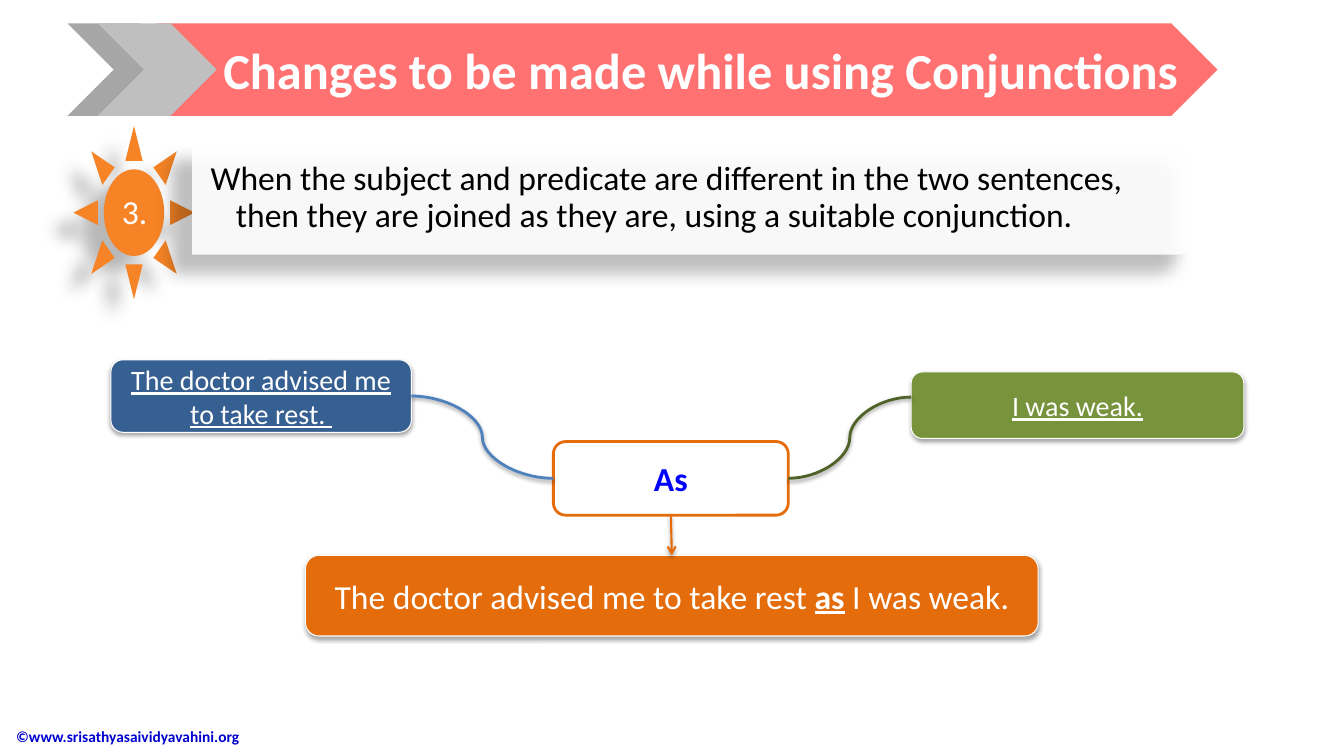
from lxml.etree import SubElement
from pptx import Presentation
from pptx.dml.color import RGBColor
from pptx.enum.shapes import MSO_CONNECTOR, MSO_SHAPE
from pptx.enum.text import MSO_ANCHOR, PP_ALIGN
from pptx.oxml.ns import qn
from pptx.util import Pt

COLORS = {
    "white": "FFFFFF", "black": "000000", "footer": "0000CC", "as": "0000FF",
    "blue": "376092", "blue_line": "4F81BD", "green": "77933C", "green_line": "4F6228",
    "orange": "E46C0A", "sun": "F68426", "coral": "FF7271",
    "dark_gray": "A6A6A6", "light_gray": "BFBFBF",
}


def write(target, runs, size, color, align=PP_ALIGN.CENTER, insets=(7.2, 3.6, 7.2, 3.6)):
    frame = target.text_frame
    frame.word_wrap = True
    frame.vertical_anchor = MSO_ANCHOR.MIDDLE
    frame.margin_left, frame.margin_top, frame.margin_right, frame.margin_bottom = map(Pt, insets)
    paragraph = frame.paragraphs[0]
    paragraph.alignment = align
    for text, bold, underline in runs:
        run = paragraph.add_run()
        run.text = text
        run.font.name = "Calibri"
        run.font.size = Pt(size)
        run.font.bold = bold
        run.font.underline = underline
        run.font.color.rgb = RGBColor.from_string(COLORS[color])
    return paragraph


def set_shadow(item, opacity=0, blur=0, distance=0, direction=0):
    effects = SubElement(item.element.spPr, qn("a:effectLst"))
    if opacity:
        outer = SubElement(effects, qn("a:outerShdw"), blurRad=str(Pt(blur)), dist=str(Pt(distance)),
                           dir=str(direction * 60000), algn="ctr", rotWithShape="0")
        tint = SubElement(outer, qn("a:srgbClr"), val=COLORS["black"])
        SubElement(tint, qn("a:alpha"), val=str(opacity * 1000))


CARD_SHADOW = (35, 3.1, 1.8, 90)
CURVE_SHADOW = (38, 3.1, 1.6, 90)
DEEP_SHADOW = (28, 11.8, 19.7, 141)

prs = Presentation()
prs.slide_width, prs.slide_height = Pt(960), Pt(540)
shapes = prs.slides.add_slide(prs.slide_layouts[6]).shapes

footer = shapes.add_textbox(Pt(0), Pt(511.2), Pt(258), Pt(29.5))
write(footer, [("©www.srisathyasaividyavahini.org", True, False)], 11, "footer",
      PP_ALIGN.LEFT, (11.5, 3.6, 7.2, 3.6))

cards = {}
for name, box, fill, border, width, shadow, size, color, runs in [
    ("advice", (79.2, 257, 214.6, 51.8), "blue", "white", 0.75, CARD_SHADOW, 20, "white",
     [("The doctor advised me to take rest. ", False, True)]),
    ("reason", (650.9, 265.7, 237.6, 47.5), "green", "white", 0.75, CARD_SHADOW, 20, "white",
     [("I was weak.", False, True)]),
    ("conjunction", (395.3, 315.4, 167.8, 52.6), "white", "orange", 2, (), 24, "as",
     [("As", True, False)]),
    ("joined", (218.2, 396.7, 523.4, 57.6), "orange", "white", 0.75, CARD_SHADOW, 24, "white",
     [("The doctor advised me to take rest ", False, False), ("as", True, True),
      (" I was weak.", False, False)]),
]:
    card = shapes.add_shape(MSO_SHAPE.ROUNDED_RECTANGLE, *map(Pt, box))
    card.fill.solid()
    card.fill.fore_color.rgb = RGBColor.from_string(COLORS[fill])
    card.line.color.rgb = RGBColor.from_string(COLORS[border])
    card.line.width = Pt(width)
    set_shadow(card, *shadow)
    write(card, runs, size, color)
    cards[name] = card

for kind, ends, start, finish, color, width, shadow in [
    (MSO_CONNECTOR.CURVE, (293.8, 282.9, 395.3, 341.7), ("advice", 3), ("conjunction", 1),
     "blue_line", 2, CURVE_SHADOW),
    (MSO_CONNECTOR.CURVE, (563.1, 341.7, 650.9, 283.7), ("conjunction", 3), None,
     "green_line", 2, CURVE_SHADOW),
    (MSO_CONNECTOR.STRAIGHT, (479.2, 368, 479.9, 396.7), ("conjunction", 2), ("joined", 0),
     "orange", 1.5, CARD_SHADOW),
]:
    link = shapes.add_connector(kind, *map(Pt, ends))
    link.begin_connect(cards[start[0]], start[1])
    if finish:
        link.end_connect(cards[finish[0]], finish[1])
    link.line.color.rgb = RGBColor.from_string(COLORS[color])
    link.line.width = Pt(width)
    if kind == MSO_CONNECTOR.STRAIGHT:
        SubElement(link.element.spPr.find(qn("a:ln")), qn("a:tailEnd"), type="arrow")
    set_shadow(link, *shadow)

decor = {}
for name, preset, box, fill, rotation, shadow in [
    ("sun", MSO_SHAPE.SUN, (33.8, 108.7, 123.8, 86.4), "sun", 90, DEEP_SHADOW),
    ("panel", MSO_SHAPE.ROUND_2_SAME_RECTANGLE, (455.8, -217.4, 80.6, 717.8), "white", 90, DEEP_SHADOW),
    ("tail", MSO_SHAPE.CHEVRON, (48.2, 16.6, 85, 66.2), "dark_gray", 0, ()),
    ("banner", MSO_SHAPE.PENTAGON, (112.3, 16.6, 757.4, 66.2), "coral", 0, ()),
    ("notch", MSO_SHAPE.CHEVRON, (69.8, 16.6, 85, 66.2), "light_gray", 0, ()),
]:
    part = shapes.add_shape(preset, *map(Pt, box))
    part.rotation = rotation
    part.fill.solid()
    part.fill.fore_color.rgb = RGBColor.from_string(COLORS[fill])
    part.line.fill.background()
    set_shadow(part, *shadow)
    decor[name] = part
    if name == "sun":
        number = shapes.add_textbox(Pt(80.6), Pt(130.3), Pt(31), Pt(43.9))
        write(number, [("3.", False, False)], 24, "white", insets=(1.4,) * 4).line_spacing = 0.9

panel_color = decor["panel"].element.spPr.find(qn("a:solidFill"))[0]
SubElement(panel_color, qn("a:alpha"), val="90000")

title = write(decor["banner"], [("Changes to be made while using Conjunctions", True, False)], 36, "white")
title.element.get_or_add_pPr().set("marL", str(Pt(36))) if hasattr(title, "element") else \
    title._p.get_or_add_pPr().set("marL", str(Pt(36)))

rule = shapes.add_textbox(Pt(136.8), Pt(105.1), Pt(713.5), Pt(72.7))
rule_text = write(rule, [("When the subject and predicate are different in the two sentences, "
                          "then they are joined as they are, using a suitable conjunction.", False, False)],
                  24, "black", PP_ALIGN.LEFT, (13.7, 1.4, 1.4, 1.4))
rule_text.line_spacing = 0.9
rule_format = rule_text._p.get_or_add_pPr()
rule_format.set("marL", str(Pt(18)))
rule_format.set("indent", str(Pt(-18)))

prs.save("out.pptx")
